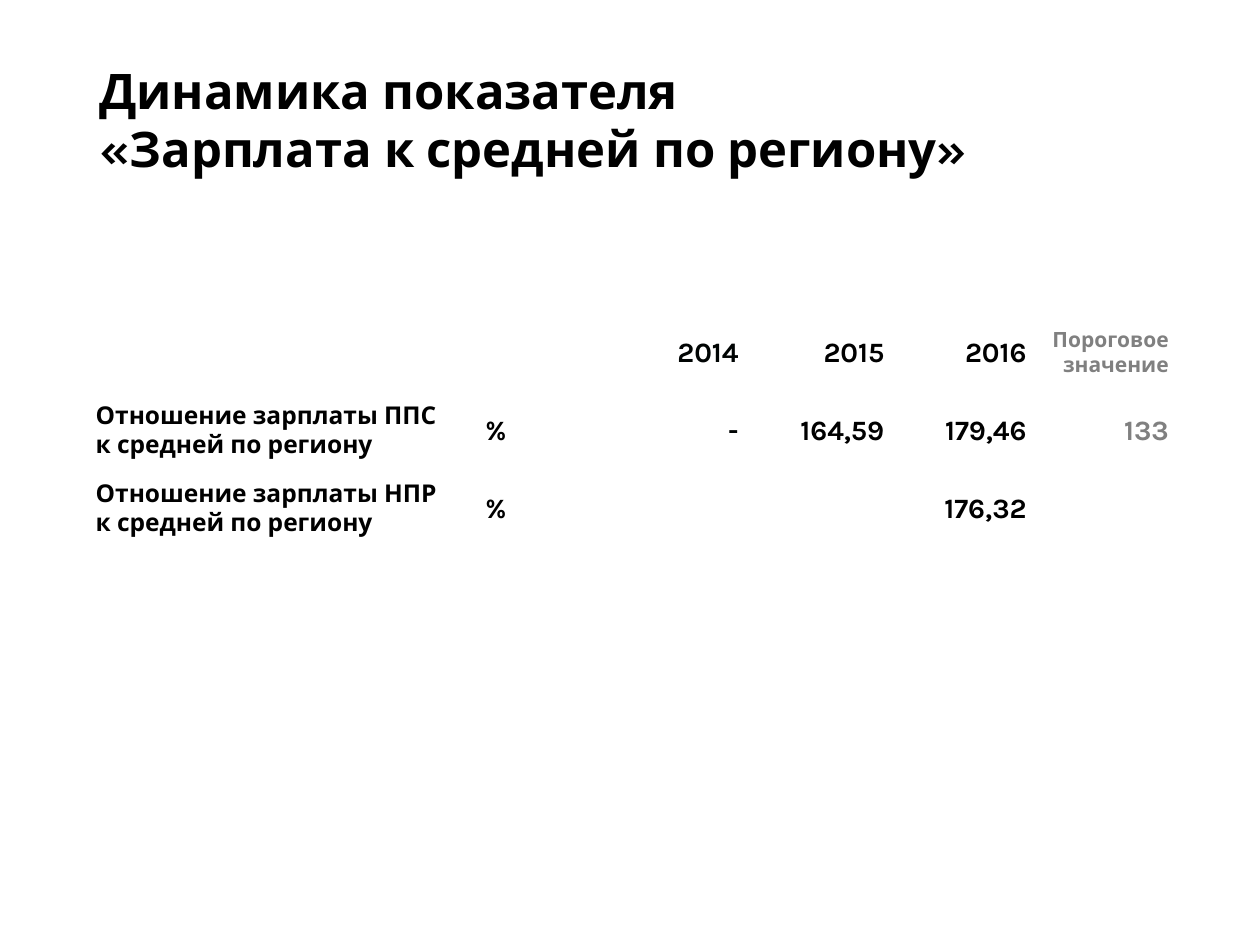
from pptx import Presentation
from pptx.dml.color import RGBColor
from pptx.enum.text import MSO_ANCHOR, PP_ALIGN
from pptx.util import Pt

FONT = "Karla"
BLACK, INK, GRAY = "000000", "000403", "808080"
TITLE = "Динамика показателя\v«Зарплата к средней по региону»"
ROWS = [
    ["", "", "2014", "2015", "2016", "Пороговое значение"],
    ["Отношение зарплаты ППС\nк средней по региону", "%", "-", "164,59", "179,46", "133"],
    ["Отношение зарплаты НПР\nк средней по региону", "%", "", "", "176,32", ""],
]
COLUMN_WIDTHS = [222.5, 72, 82.8, 81.3, 81.3, 81.3]
COLUMN_COLORS = [BLACK, BLACK, INK, BLACK, BLACK, GRAY]
ROW_HEIGHT = 44.64
LEFT, WIDTH = 49.7, 620.6
LABEL, FIRST_YEAR, THRESHOLD = 0, 2, 5


def set_font(paragraph, size, color):
    font = paragraph.font
    font.name, font.size, font.bold = FONT, Pt(size), True
    font.color.rgb = RGBColor.from_string(color)


def add_title(slide):
    shape = slide.shapes.add_textbox(Pt(LEFT), Pt(28.8), Pt(WIDTH), Pt(37.4))
    frame = shape.text_frame
    frame.word_wrap = True
    frame.margin_top = Pt(5.5)
    frame.text = TITLE
    set_font(frame.paragraphs[0], 28, BLACK)


def fill_cell(cell, text, row, column):
    cell.fill.background()
    cell.vertical_anchor = MSO_ANCHOR.MIDDLE
    horizontal, vertical = (5, 4.3) if column <= FIRST_YEAR else (3, 3)
    cell.margin_left = cell.margin_right = Pt(horizontal)
    cell.margin_top = cell.margin_bottom = Pt(vertical)
    cell.text = text
    if column == LABEL:
        size = 14
    elif row == 0 and column == THRESHOLD:
        size = 12
    else:
        size = 16
    for paragraph in cell.text_frame.paragraphs:
        paragraph.alignment = PP_ALIGN.RIGHT if column >= FIRST_YEAR else PP_ALIGN.LEFT
        set_font(paragraph, size, COLUMN_COLORS[column])


def add_indicators(slide):
    table = slide.shapes.add_table(
        len(ROWS), len(COLUMN_WIDTHS), Pt(LEFT), Pt(179.3), Pt(WIDTH), Pt(ROW_HEIGHT * len(ROWS))
    ).table
    table.first_row = table.horz_banding = False
    for column, width in zip(table.columns, COLUMN_WIDTHS):
        column.width = Pt(width)
    for row, texts in enumerate(ROWS):
        table.rows[row].height = Pt(ROW_HEIGHT)
        for column, text in enumerate(texts):
            fill_cell(table.cell(row, column), text, row, column)


def main():
    presentation = Presentation()
    presentation.slide_width, presentation.slide_height = Pt(720), Pt(540)
    slide = presentation.slides.add_slide(presentation.slide_layouts[6])
    add_title(slide)
    add_indicators(slide)
    presentation.save("out.pptx")


if __name__ == "__main__":
    main()
